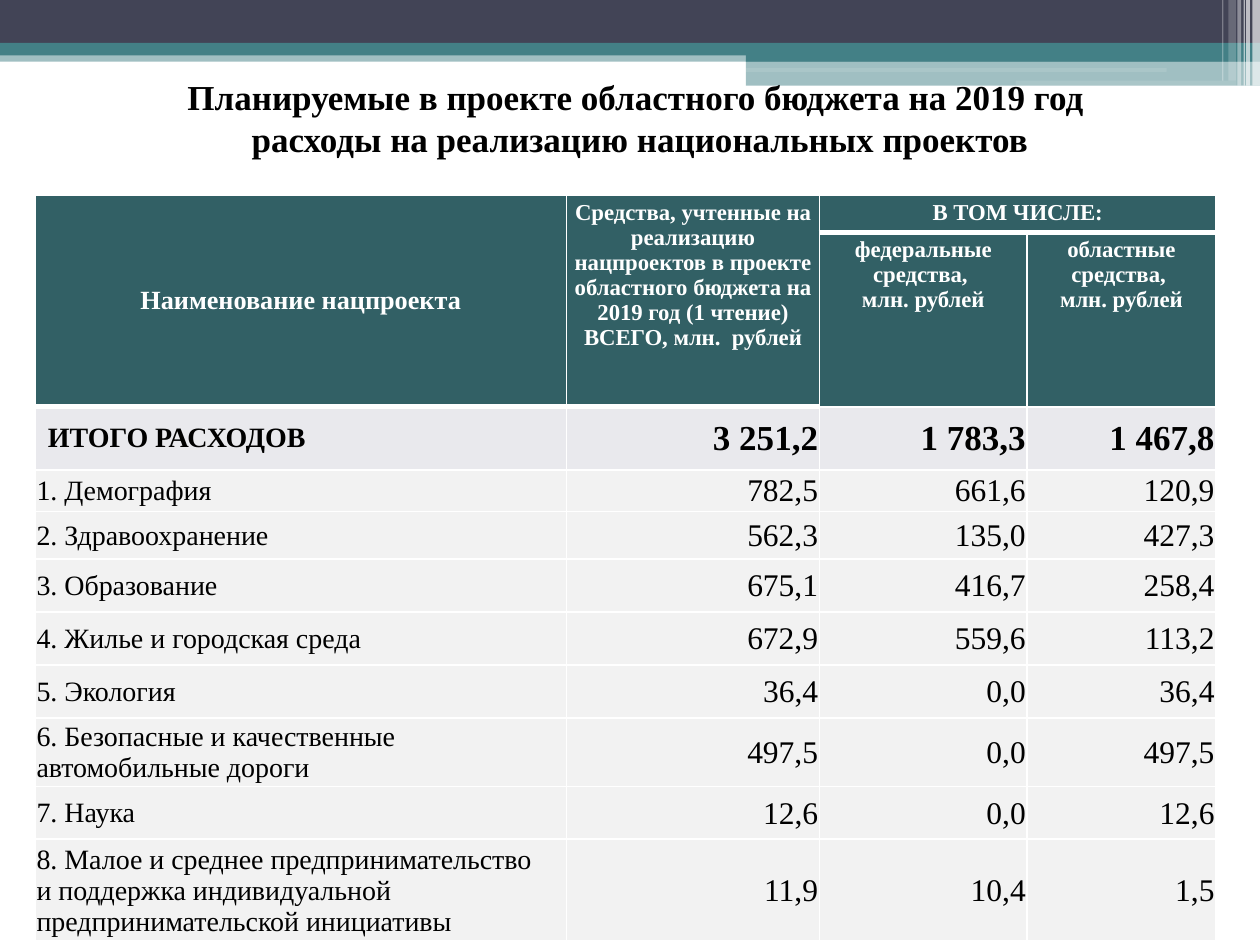
from collections import namedtuple

from lxml import etree
from pptx import Presentation
from pptx.dml.color import RGBColor
from pptx.enum.shapes import MSO_SHAPE
from pptx.enum.text import MSO_ANCHOR, MSO_AUTO_SIZE, PP_ALIGN
from pptx.oxml.ns import qn
from pptx.util import Inches, Pt

RECT, ROUNDED = MSO_SHAPE.RECTANGLE, MSO_SHAPE.ROUNDED_RECTANGLE
LEFT, CENTER, RIGHT = PP_ALIGN.LEFT, PP_ALIGN.CENTER, PP_ALIGN.RIGHT
TOP, MIDDLE = MSO_ANCHOR.TOP, MSO_ANCHOR.MIDDLE
FIT_SHAPE = MSO_AUTO_SIZE.SHAPE_TO_FIT_TEXT

Box = namedtuple("Box", "left top width height")
WIDTH, HEIGHT = Inches(10), Inches(7.5)
FONT = "Times New Roman"
WHITE, BLACK, TEAL, SLATE = "FFFFFF", "000000", "438086", "424456"
HEADER_FILL, TOTAL_FILL, ROW_FILL = "326065", "E9E9ED", "F2F2F2"
WIDE_INSETS = (0.1, 0.05, 0.1, 0.05)
HEADER_INSETS = (0.02, 0.04, 0.02, 0.04)
TIGHT_INSETS = (0.01, 0.01, 0.01, 0)

BAND_COLUMNS, BAND_ROWS = 1000, 68
BANDS = [
    (RECT, 0, 40, 1000, 9, TEAL, 50),
    (RECT, 0, 0, 1000, 34, SLATE, 100),
    (RECT, 0, 34, 1000, 10, TEAL, 100),
    (RECT, 592, 39, 408, 10, TEAL, 100),
    (RECT, 592, 48, 408, 20, TEAL, 50),
    (ROUNDED, 591, 54, 335, 3, WHITE, 11),
    (ROUNDED, 806, 64, 175, 4, WHITE, 11),
    (RECT, 994, 0, 6, 68, WHITE, 65),
    (RECT, 989, 0, 3, 68, WHITE, 65),
    (RECT, 987, 0, 1, 68, WHITE, 60),
    (RECT, 982, 0, 3, 68, WHITE, 40),
    (RECT, 975, 0, 6, 64, WHITE, 20),
    (RECT, 970, 0, 1, 64, WHITE, 30),
]

TITLE = ("Планируемые в проекте областного бюджета на 2019 год \n"
         "расходы на реализацию национальных проектов")
PROJECT_HEADING = "Наименование нацпроекта"
SUM_HEADINGS = {
    (0, 1): "Средства, учтенные на реализацию нацпроектов в проекте "
            "областного бюджета на 2019 год (1 чтение) ВСЕГО, млн.  рублей",
    (0, 2): "В ТОМ ЧИСЛЕ:",
    (1, 2): "федеральные средства, \nмлн. рублей",
    (1, 3): "областные средства, \nмлн. рублей",
}
TOTAL = ("ИТОГО РАСХОДОВ", "3 251,2", "1 783,3", "1 467,8")
PROJECTS = [
    ("1. Демография", "782,5", "661,6", "120,9"),
    ("2. Здравоохранение", "562,3", "135,0", "427,3"),
    ("3. Образование", "675,1", "416,7", "258,4"),
    ("4. Жилье и городская среда", "672,9", "559,6", "113,2"),
    ("5. Экология", "36,4", "0,0", "36,4"),
    ("6. Безопасные и качественные\nавтомобильные дороги", "497,5", "0,0", "497,5"),
    ("7. Наука", "12,6", "0,0", "12,6"),
    ("8. Малое и среднее предпринимательство\nи поддержка индивидуальной "
     "предпринимательской инициативы", "11,9", "10,4", "1,5"),
]
COLUMN_WEIGHTS = (4.22, 2.01, 1.65, 1.5)
ROW_WEIGHTS = (0.29, 1.38, 0.5, 0.33, 0.38, 0.42, 0.42, 0.42, 0.54, 0.42, 0.8)


def color(code):
    return RGBColor.from_string(code)


def share(left, top, width, height):
    return Box(int(WIDTH * left), int(HEIGHT * top), int(WIDTH * width), int(HEIGHT * height))


def write(frame, text, size, tone=BLACK, bold=False, align=LEFT):
    for index, line in enumerate(text.split("\n")):
        paragraph = frame.add_paragraph() if index else frame.paragraphs[0]
        paragraph.alignment = align
        run = paragraph.add_run()
        run.text = line
        font = run.font
        font.name, font.size, font.bold = FONT, Pt(size), bold
        font.color.rgb = color(tone)


def set_insets(holder, insets):
    sides = ("margin_left", "margin_top", "margin_right", "margin_bottom")
    for side, inset in zip(sides, insets):
        setattr(holder, side, Inches(inset))


def add_bands(slide, box):
    column, row = box.width / BAND_COLUMNS, box.height / BAND_ROWS
    for kind, left, top, width, height, tone, opacity in BANDS:
        band = slide.shapes.add_shape(
            kind, int(box.left + left * column), int(box.top + top * row),
            int(width * column), int(height * row))
        band.shadow.inherit = False
        band.line.fill.background()
        band.fill.solid()
        band.fill.fore_color.rgb = color(tone)
        if opacity < 100:
            tone_node = band.fill._xPr.find(".//" + qn("a:srgbClr"))
            etree.SubElement(tone_node, qn("a:alpha"), val=str(opacity * 1000))


def add_title(slide, box):
    title = slide.shapes.title
    slide.shapes._spTree.append(title._element)
    title.left, title.top, title.width, title.height = box
    frame = title.text_frame
    frame.word_wrap, frame.auto_size = True, FIT_SHAPE
    frame.vertical_anchor = TOP
    set_insets(frame, WIDE_INSETS)
    write(frame, TITLE, 20, bold=True, align=CENTER)


def set_borders(cell, bottom):
    properties = cell._tc.get_or_add_tcPr()
    for side, points in (("L", 1), ("R", 1), ("T", 1), ("B", bottom)):
        border = etree.SubElement(properties, qn("a:ln" + side), w=str(Pt(points)))
        paint = etree.SubElement(border, qn("a:solidFill"))
        etree.SubElement(paint, qn("a:srgbClr"), val=WHITE)


def fill_cell(cell, text, fill, insets, anchor=MIDDLE, bottom=1, **text_format):
    set_borders(cell, bottom)
    cell.fill.solid()
    cell.fill.fore_color.rgb = color(fill)
    set_insets(cell, insets)
    cell.vertical_anchor = anchor
    write(cell.text_frame, text, **text_format)


def fill_headings(table):
    for first, last in (((0, 0), (1, 0)), ((0, 1), (1, 1)), ((0, 2), (0, 3))):
        table.cell(*first).merge(table.cell(*last))
    heading = dict(fill=HEADER_FILL, tone=WHITE, bold=True, align=CENTER)
    for row in range(2):
        for column in range(len(COLUMN_WEIGHTS)):
            bottom = 3 if row == 0 or column < 2 else 1
            cell = table.cell(row, column)
            if column == 0:
                text = "" if row else PROJECT_HEADING
                fill_cell(cell, text, insets=WIDE_INSETS, bottom=bottom, size=15, **heading)
            else:
                fill_cell(cell, SUM_HEADINGS.get((row, column), ""), insets=HEADER_INSETS,
                          anchor=TOP, bottom=bottom, size=13, **heading)


def fill_sums(table):
    for row, (name, *sums) in enumerate([TOTAL] + PROJECTS, start=2):
        is_total = row == 2
        look = dict(fill=TOTAL_FILL if is_total else ROW_FILL, bold=is_total)
        fill_cell(table.cell(row, 0), name, size=16,
                  insets=WIDE_INSETS if is_total else TIGHT_INSETS, **look)
        for column, amount in enumerate(sums, start=1):
            fill_cell(table.cell(row, column), amount, insets=TIGHT_INSETS,
                      size=20 if is_total else 18, align=RIGHT, **look)


def add_budget_table(slide, box):
    table = slide.shapes.add_table(len(ROW_WEIGHTS), len(COLUMN_WEIGHTS), *box).table
    table.horz_banding = False
    for column, weight in zip(table.columns, COLUMN_WEIGHTS):
        column.width = int(box.width * weight / sum(COLUMN_WEIGHTS))
    for row, weight in zip(table.rows, ROW_WEIGHTS):
        row.height = int(box.height * weight / sum(ROW_WEIGHTS))
    fill_headings(table)
    fill_sums(table)


def main():
    deck = Presentation()
    deck.slide_width, deck.slide_height = WIDTH, HEIGHT
    slide = deck.slides.add_slide(deck.slide_layouts[5])
    slide.background.fill.solid()
    slide.background.fill.fore_color.rgb = color(WHITE)
    add_bands(slide, share(0, 0, 1, 0.68 / 7.5))
    add_title(slide, share(0, 0.55 / 7.5, 1.016, 0.77 / 7.5))
    add_budget_table(slide, share(0.028, 1.55 / 7.5, 0.937, 5.9 / 7.5))
    deck.save("out.pptx")


if __name__ == "__main__":
    main()
